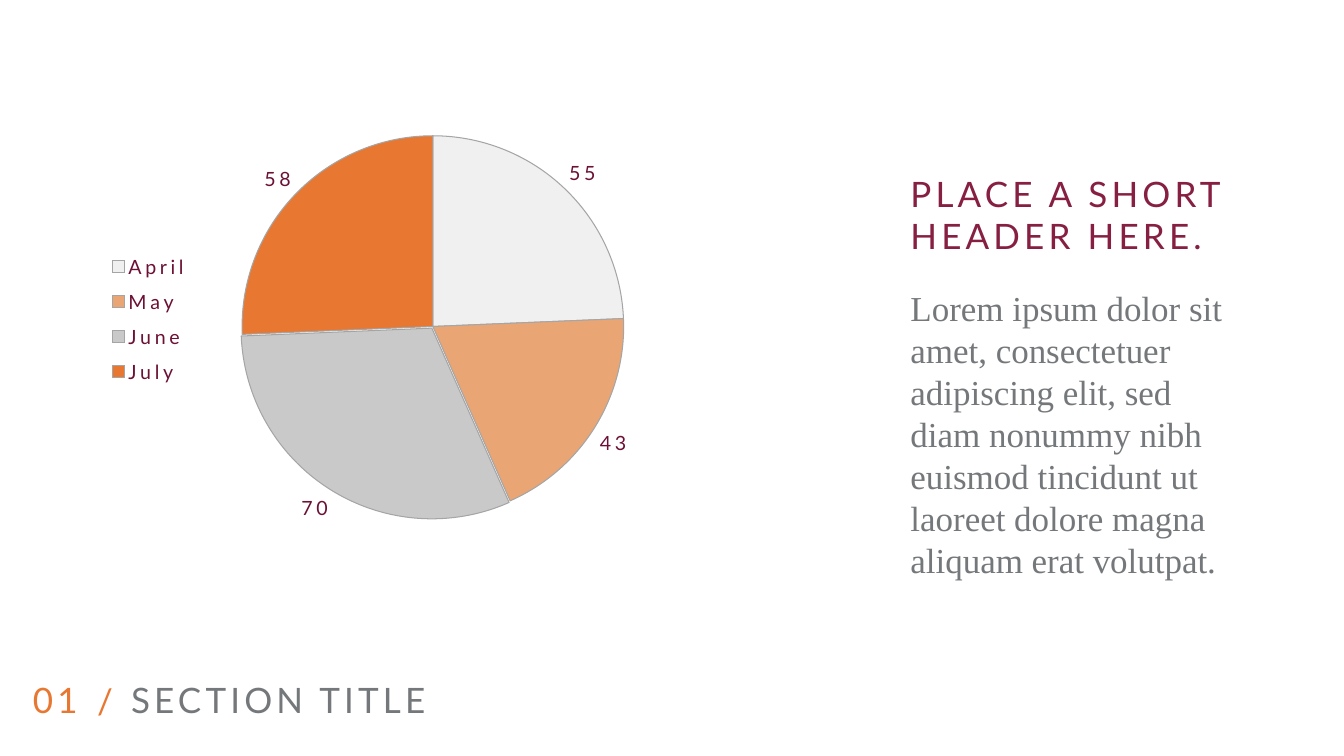
from lxml.etree import SubElement
from pptx import Presentation
from pptx.chart.data import CategoryChartData
from pptx.dml.color import RGBColor
from pptx.enum.chart import XL_CHART_TYPE, XL_LABEL_POSITION, XL_LEGEND_POSITION
from pptx.enum.text import MSO_ANCHOR, MSO_AUTO_SIZE, PP_ALIGN
from pptx.oxml import parse_xml
from pptx.oxml.ns import nsdecls, qn
from pptx.util import Inches, Pt

MAROON = RGBColor(0x86, 0x1F, 0x41)
WINE = RGBColor(0x6C, 0x10, 0x35)
ORANGE = RGBColor(0xE8, 0x77, 0x31)
PEACH = RGBColor(0xE9, 0xA5, 0x74)
GRAY = RGBColor(0x75, 0x78, 0x7B)
SILVER = RGBColor(0xC9, 0xC9, 0xC9)
PALE = RGBColor(0xED, 0xED, 0xED)
EDGE = RGBColor(0xA5, 0xA5, 0xA5)

HEAD = {"name": "Lato", "size": Pt(25)}
BODY = {"name": "Times New Roman", "size": Pt(25)}
LABEL = {"name": "Lato", "size": Pt(14)}
BASE = {"name": "Arial", "size": Pt(10)}

# month, value, colour
MONTHS = [("April", 55, PALE), ("May", 43, PEACH),
          ("June", 70, SILVER), ("July", 58, ORANGE)]


def set_font(font, style, color, gap=0):
    """Apply a style, a colour and letter spacing in points."""
    for key, value in style.items():
        setattr(font, key, value)
    font.color.rgb = color
    if gap:
        font._rPr.set("spc", str(int(gap * 100)))


def layout(x, y, w, h, inner=False):
    """Manual chart layout, as fractions of the chart area."""
    target = '<c:layoutTarget val="inner"/>' if inner else ""
    size = "".join(f'<c:{k} val="{v}"/>'
                   for k, v in zip("xywh", (x, y, w, h)))
    return parse_xml(
        f'<c:layout {nsdecls("c")}><c:manualLayout>{target}'
        f'<c:xMode val="edge"/><c:yMode val="edge"/>{size}'
        '</c:manualLayout></c:layout>')


class Deck:
    def __init__(self):
        self.show = Presentation()
        self.show.slide_width = Inches(13.33)
        self.show.slide_height = Inches(7.5)
        self.slide = self.show.slides.add_slide(self.show.slide_layouts[5])

    def text(self, words, box, color, style=HEAD, gap=3, shape=None, **form):
        x, y, w, h = map(Inches, box)
        if shape is None:
            shape = self.slide.shapes.add_textbox(x, y, w, h)
        shape.left, shape.top, shape.width, shape.height = x, y, w, h
        frame = shape.text_frame
        frame.word_wrap = True
        frame.auto_size = MSO_AUTO_SIZE.NONE
        frame.vertical_anchor = form.pop("anchor", MSO_ANCHOR.TOP)
        for side in ("left", "top", "right", "bottom"):
            setattr(frame, f"margin_{side}", Inches(0.05))
        par = frame.paragraphs[0]
        for key, value in form.items():
            setattr(par, key, value)
        run = par.add_run()
        run.text = words
        set_font(run.font, style, color, gap)

    def label(self, words, box, color, align=PP_ALIGN.RIGHT, shape=None):
        """One part of the section line at the foot."""
        self.text(words, box, color, shape=shape, alignment=align,
                  line_spacing=0.9, anchor=MSO_ANCHOR.BOTTOM)

    def pie(self, box):
        data = CategoryChartData()
        data.categories = [name for name, _, _ in MONTHS]
        data.add_series("Series 1", [value for _, value, _ in MONTHS])
        chart = self.slide.shapes.add_chart(
            XL_CHART_TYPE.PIE, *map(Inches, box), data).chart
        chart.has_title = False
        set_font(chart.font, BASE, MAROON)

        area = chart._chartSpace.chart.plotArea
        for old in area.findall(qn("c:layout")):
            area.remove(old)
        area.insert(0, layout(0.222, 0.238, 0.728, 0.504, inner=True))

        chart.has_legend = True
        legend = chart.legend
        legend.position = XL_LEGEND_POSITION.LEFT
        legend.include_in_layout = False
        set_font(legend.font, LABEL, WINE, 2.5)
        node = legend._element
        for old in node.findall(qn("c:layout")):
            node.remove(old)
        node.find(qn("c:legendPos")).addnext(layout(0.16, 0.38, 0.12, 0.2))

        plot = chart.plots[0]
        plot.vary_by_categories = True
        for i, (name, _, color) in enumerate(MONTHS):
            form = plot.series[0].points[i].format
            form.fill.solid()
            form.fill.fore_color.rgb = color
            form.line.color.rgb = EDGE
            form.line.width = Pt(0.75)
            shade = form._element.find(qn("c:spPr"))
            if color == PALE:
                tint = shade.find(".//" + qn("a:srgbClr"))
                SubElement(tint, qn("a:alpha")).set("val", "80000")
            if name == "June":
                shade.addprevious(parse_xml(
                    f'<c:explosion {nsdecls("c")} val="1"/>'))

        plot.has_data_labels = True
        tags = plot.data_labels
        set_font(tags.font, LABEL, WINE, 2.5)
        tags.show_value = True
        tags.position = XL_LABEL_POSITION.OUTSIDE_END
        tags.number_format = r"#\ ###/###"
        tags.number_format_is_linked = False


def main():
    deck = Deck()
    deck.pie((-0.23, -0.44, 7.72, 7.51))
    deck.label("SECTION TITLE", (1.25, 6.75, 5.37, 0.45), GRAY,
               PP_ALIGN.LEFT, deck.slide.shapes.title)
    deck.label("01", (0, 6.75, 0.82, 0.45), ORANGE)
    deck.label("/", (0.9, 6.76, 0.27, 0.45), ORANGE)
    deck.text("PLACE A SHORT HEADER HERE.", (8.98, 1.66, 4.46, 0.94), MAROON)
    deck.text("Lorem ipsum dolor sit amet, consectetuer adipiscing elit, sed "
              "diam nonummy nibh euismod tincidunt ut laoreet dolore magna "
              "aliquam erat volutpat.", (8.98, 2.79, 3.22, 3.05), GRAY,
              BODY, gap=0)
    deck.show.save("out.pptx")


if __name__ == "__main__":
    main()
